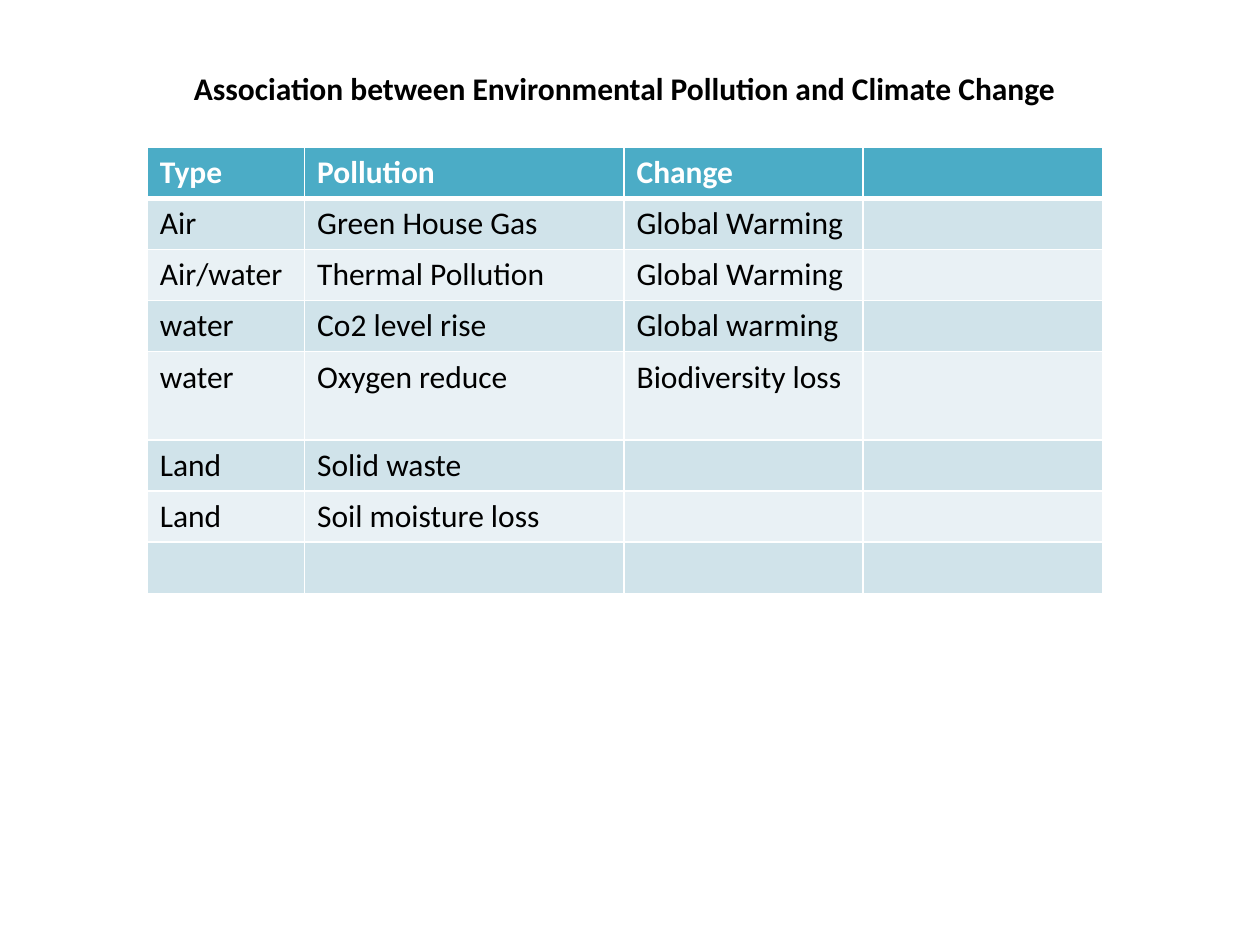
from lxml.etree import SubElement
from pptx import Presentation
from pptx.dml.color import RGBColor
from pptx.enum.text import PP_ALIGN
from pptx.oxml.ns import qn
from pptx.util import Cm, Pt

HEADER, BANDS, WHITE = "4BACC6", ("E9F1F5", "D0E3EA"), "FFFFFF"
LEFT, WIDTH = Cm(2.97), Cm(19.25)


def write(frame, text, color="000000", bold=False, align=PP_ALIGN.LEFT):
    line = frame.paragraphs[0]
    line.alignment = align
    run = line.add_run()
    run.text = text
    run.font.name = "Calibri"
    run.font.size = Pt(18)
    run.font.bold = bold
    run.font.color.rgb = RGBColor.from_string(color)


def add_border(cell, side, points):
    """Draw a white line on one side (L, R, T or B); call before filling the cell."""
    border = SubElement(cell._tc.get_or_add_tcPr(), qn(f"a:ln{side}"), w=str(Pt(points)))
    SubElement(SubElement(border, qn("a:solidFill")), qn("a:srgbClr"), val=WHITE)


deck = Presentation()
deck.slide_width, deck.slide_height = Cm(25.4), Cm(19.05)
slide = deck.slides.add_slide(deck.slide_layouts[6])

title = slide.shapes.add_textbox(LEFT, Cm(1.27), WIDTH, Cm(1.03)).text_frame
title.word_wrap = True
write(title, "Association between Environmental Pollution and Climate Change",
      bold=True, align=PP_ALIGN.CENTER)

entries = [
    ("Type", "Pollution", "Change", ""),
    ("Air", "Green House Gas", "Global Warming", ""),
    ("Air/water", "Thermal Pollution", "Global Warming", ""),
    ("water", "Co2 level rise", "Global warming", ""),
    ("water", "Oxygen reduce", "Biodiversity loss", ""),
    ("Land", "Solid waste", "", ""),
    ("Land", "Soil moisture loss", "", ""),
    ("", "", "", ""),
]
column_widths = (3.17, 6.44, 4.82, 4.82)
row_heights = [1.03] * len(entries)
row_heights[4] = 1.78

associations = slide.shapes.add_table(
    len(entries), len(column_widths), LEFT, Cm(2.97), WIDTH, Cm(sum(row_heights))).table
for column, width in zip(associations.columns, column_widths):
    column.width = Cm(width)

for index, (row, height, entry) in enumerate(zip(associations.rows, row_heights, entries)):
    row.height = Cm(height)
    is_header = index == 0
    for cell, text in zip(row.cells, entry):
        for side in "LRTB":
            below_header = (index, side) in ((0, "B"), (1, "T"))
            add_border(cell, side, 3 if below_header else 1)
        cell.fill.solid()
        cell.fill.fore_color.rgb = RGBColor.from_string(HEADER if is_header else BANDS[index % 2])
        if text:
            write(cell.text_frame, text, color=WHITE if is_header else "000000", bold=is_header)

deck.save("out.pptx")
